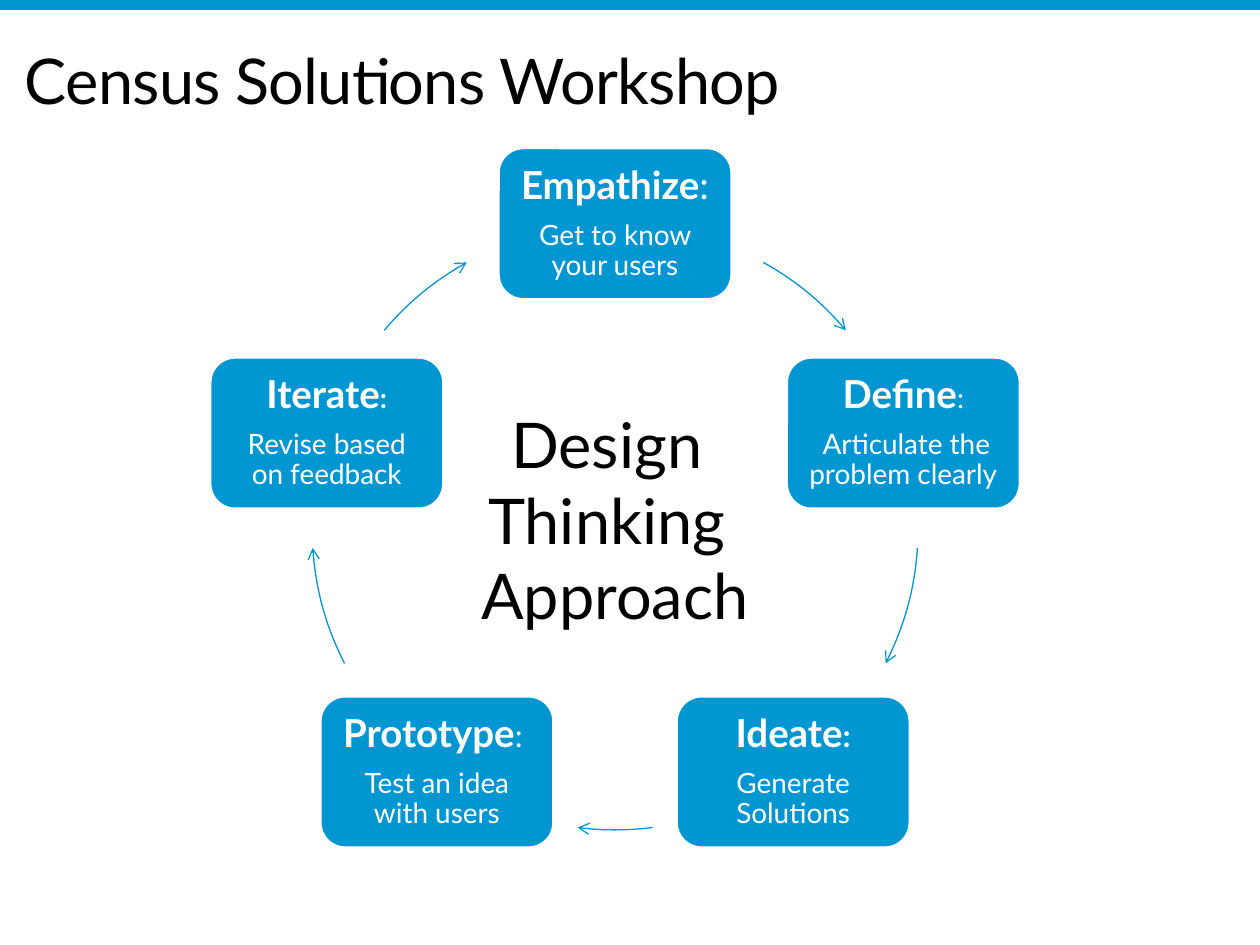
from math import cos, radians, sin

from lxml import etree
from pptx import Presentation
from pptx import util as u
from pptx.dml.color import RGBColor
from pptx.enum import shapes, text
from pptx.oxml.ns import qn

FONT = "Lato"
BLUE, WHITE, BLACK = "0096D2", "FFFFFF", "000000"
CENTER_X, CENTER_Y, RADIUS = 12.4, 10.62, 6.11
BOX_W, BOX_H = 4.72, 3.07
STEPS = [
    ("Empathize", ":", 22, False, "Get to know your users", (299.3, 319.6)),
    ("Define", ":", 16, False, " Articulate the problem clearly", (4, 26.8)),
    ("Ideate", ":", 18, True, "Generate Solutions", (82.9, 97.1)),
    ("Prototype", ": ", 18, False, "Test an idea with users", (153.2, 176)),
    ("Iterate", ":", 16, True, "Revise based on feedback", (220.4, 240.7)),
]


def rgb(value):
    """Turn a hex string into a colour."""
    return RGBColor.from_string(value)


def set_font(font, size, color, bold=False):
    """Give a font its face, size, colour and weight."""
    font.name, font.size, font.bold = FONT, u.Pt(size), bold
    font.color.rgb = rgb(color)


def add_shape(s, kind, x, y, w, h, fill=None, line=None, width=0.75):
    """Add a preset shape without shadow."""
    sp = s.shapes.add_shape(kind, u.Cm(x), u.Cm(y), u.Cm(w), u.Cm(h))
    sp.shadow.inherit = False
    if fill:
        sp.fill.solid()
        sp.fill.fore_color.rgb = rgb(fill)
    else:
        sp.fill.background()
    if line:
        sp.line.color.rgb = rgb(line)
        sp.line.width = u.Pt(width)
    else:
        sp.line.fill.background()
    return sp


def add_text(s, x, y, w, h, lines, align, margin, spacing=0):
    """Add a text box with 36 point lines."""
    tf = s.shapes.add_textbox(u.Cm(x), u.Cm(y), u.Cm(w), u.Cm(h)).text_frame
    tf.word_wrap = True
    tf.margin_left = tf.margin_right = u.Cm(margin)
    tf.margin_top = tf.margin_bottom = u.Cm(margin / 2)
    for i, line in enumerate(lines):
        p = tf.paragraphs[0] if i == 0 else tf.add_paragraph()
        p.alignment = align
        set_font(p.font, 36, BLACK)
        r = p.add_run()
        r.text = line
        if spacing:
            r.font._element.set("spc", str(spacing))


def format_step_paragraph(p):
    """Centre a paragraph of a step and set its spacing."""
    p.alignment = text.PP_ALIGN.CENTER
    p.line_spacing = 0.9
    after = etree.SubElement(p._p.get_or_add_pPr(), qn("a:spcAft"))
    etree.SubElement(after, qn("a:spcPct")).set("val", "35000")


def add_step(s, angle, name, colon, colon_size, colon_bold, detail):
    """Add the box of one step, centred on the circle at an angle."""
    x = CENTER_X + RADIUS * cos(radians(angle)) - BOX_W / 2
    y = CENTER_Y + RADIUS * sin(radians(angle)) - BOX_H / 2
    sp = add_shape(s, shapes.MSO_SHAPE.ROUNDED_RECTANGLE, x, y, BOX_W, BOX_H, BLUE, WHITE, 2)
    tf = sp.text_frame
    tf.word_wrap = True
    tf.vertical_anchor = text.MSO_ANCHOR.MIDDLE
    tf.margin_left = tf.margin_right = tf.margin_top = tf.margin_bottom = u.Cm(0.23)
    p = tf.paragraphs[0]
    format_step_paragraph(p)
    for words, size, bold in ((name, 22, True), (colon, colon_size, colon_bold)):
        r = p.add_run()
        r.text = words
        set_font(r.font, size, WHITE, bold)
    p = tf.add_paragraph()
    format_step_paragraph(p)
    set_font(p.font, 16, WHITE)
    p.add_run().text = detail


def add_arc_arrow(s, start, end):
    """Add an arrow along the circle between two angles."""
    sp = add_shape(s, shapes.MSO_SHAPE.ARC, CENTER_X - RADIUS, CENTER_Y - RADIUS,
                   2 * RADIUS, 2 * RADIUS, line=BLUE)
    for i, angle in enumerate((start, end)):
        sp.adjustments[i] = angle * 0.6
    etree.SubElement(sp.line._get_or_add_ln(), qn("a:tailEnd")).set("type", "arrow")


def main():
    """Build the slide and save it."""
    prs = Presentation()
    prs.slide_width, prs.slide_height = u.Cm(25.4), u.Cm(19.05)
    s = prs.slides.add_slide(prs.slide_layouts[6])
    add_shape(s, shapes.MSO_SHAPE.RECTANGLE, 0, 0, 25.4, 0.2, BLUE)
    add_text(s, 0.5, 0.84, 22.86, 1.57, ["Census Solutions Workshop"],
             text.PP_ALIGN.LEFT, 0, -40)
    for i, (*words, arc) in enumerate(STEPS):
        add_step(s, 72 * i - 90, *words)
        add_arc_arrow(s, *arc)
    add_text(s, 9.12, 8.05, 6.55, 4.88, ["Design ", "Thinking ", "Approach"],
             text.PP_ALIGN.CENTER, 0.25)
    prs.save("out.pptx")


if __name__ == "__main__":
    main()
